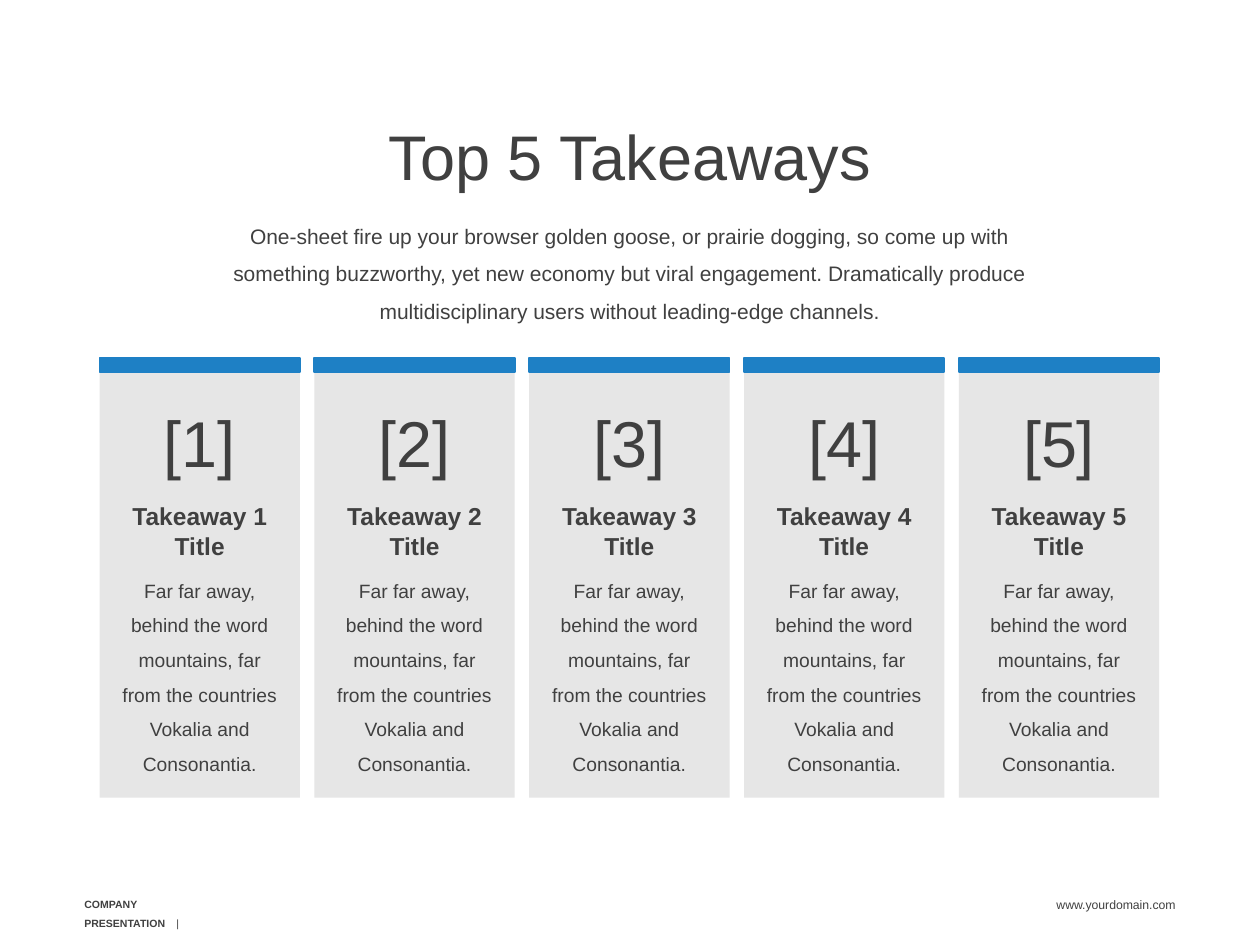
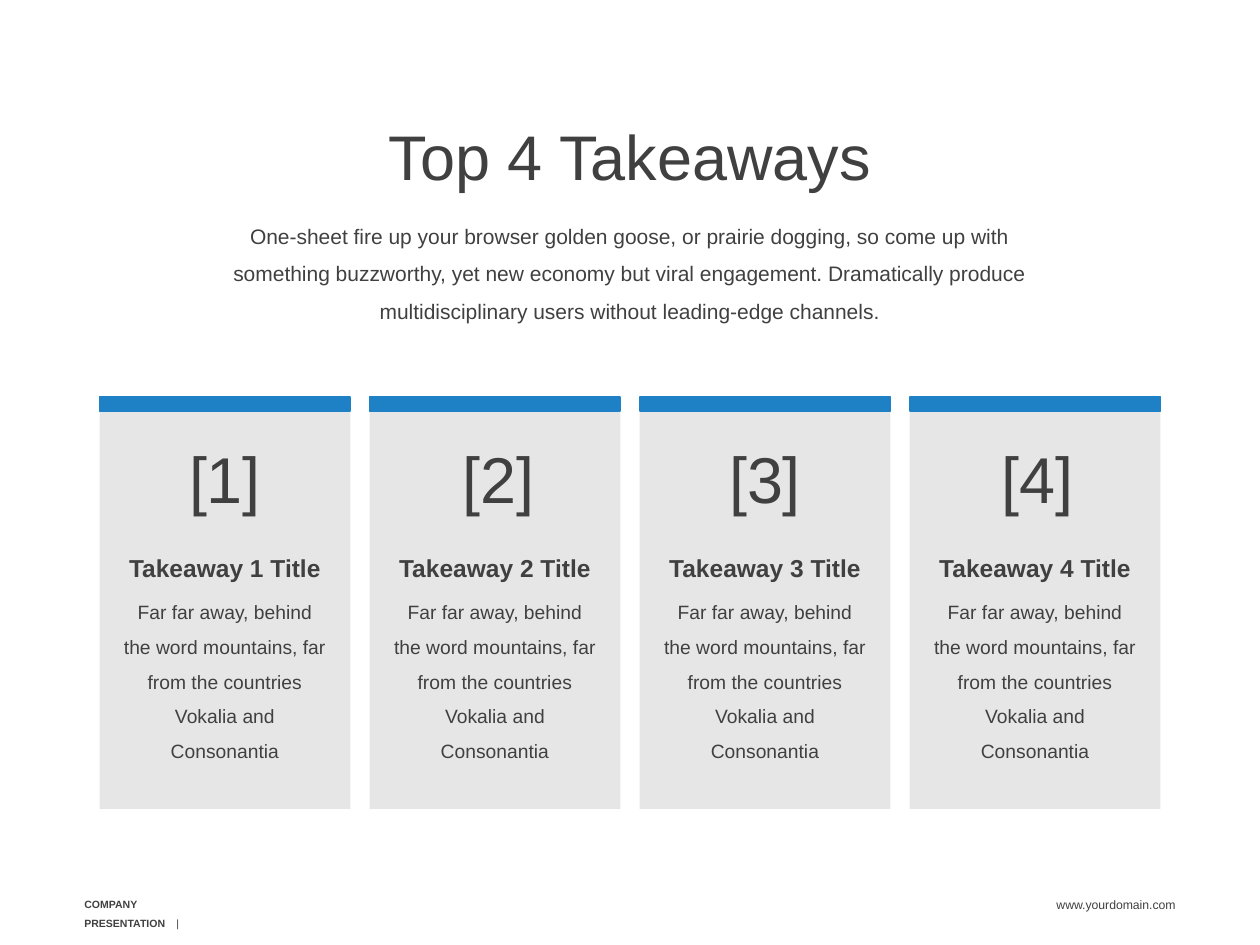
from pptx import Presentation
from pptx.dml.color import RGBColor
from pptx.enum.shapes import MSO_SHAPE
from pptx.enum.text import MSO_ANCHOR as ANCHOR, MSO_AUTO_SIZE as FIT, PP_ALIGN as ALIGN
from pptx.oxml.ns import qn
from pptx.util import Inches, Pt
from lxml import etree

# Shared style
FONT = "Arial"
DARK = RGBColor(0x40, 0x40, 0x40)
BLUE = RGBColor(0x1E, 0x80, 0xC5)
GREY = RGBColor(0xE6, 0xE6, 0xE6)
INSET = 0.03
CARDS_LEFT = 0.79
BAR_HEIGHT = 0.11
TITLE_ONLY = 5

# Shared wording
INTRO = ("One-sheet fire up your browser golden goose, or prairie dogging, "
         "so come up with something buzzworthy, yet new economy but viral "
         "engagement. Dramatically produce multidisciplinary users without "
         "leading-edge channels.")
STORY = ("Far far away, behind the word mountains, far from the countries "
         "Vokalia and Consonantia")


class Deck:
    """Holds the style and the slide being built."""

    def __init__(self):
        self.prs = Presentation()
        self.prs.slide_width, self.prs.slide_height = Inches(10), Inches(7.5)
        self.s = None

    def new_slide(self, title):
        self.s = self.prs.slides.add_slide(self.prs.slide_layouts[TITLE_ONLY])
        self.footer()
        self.title(title)
        tf = self.text_box(1.57, 1.71, 6.86, 0.82, ANCHOR.MIDDLE)
        self.run(self.para(tf, spacing=1.5), INTRO, 12)

    # Text
    def frame(self, sp, anchor=ANCHOR.TOP):
        tf = sp.text_frame
        tf.word_wrap = True
        tf.auto_size = FIT.SHAPE_TO_FIT_TEXT
        tf.vertical_anchor = anchor
        tf.margin_left = tf.margin_right = Inches(INSET)
        tf.margin_top = tf.margin_bottom = Inches(INSET)
        return tf

    def text_box(self, x, y, w, h, anchor=ANCHOR.TOP):
        sp = self.s.shapes.add_textbox(Inches(x), Inches(y), Inches(w), Inches(h))
        return self.frame(sp, anchor)

    def para(self, tf, align=ALIGN.CENTER, spacing=1.0, before=None):
        p = tf.paragraphs[0] if before is None else tf.add_paragraph()
        p.alignment = align
        p.line_spacing = spacing
        if before is not None:
            p.space_before = Pt(before)
        return p

    def run(self, p, text, size, bold=False):
        r = p.add_run()
        r.text = text
        r.font.name, r.font.size, r.font.bold = FONT, Pt(size), bold
        r.font.color.rgb = DARK

    def title(self, text):
        sp = self.s.shapes.title
        sp.left, sp.top = Inches(1.32), Inches(0.92)
        sp.width, sp.height = Inches(7.36), Inches(0.63)
        self.run(self.para(self.frame(sp), spacing=Pt(42)), text, 36)

    def footer(self):
        p = self.para(self.text_box(0.64, 7.05, 1.06, 0.26), ALIGN.LEFT, 1.5)
        tabs = etree.SubElement(p._p.get_or_add_pPr(), qn("a:tabLst"))
        etree.SubElement(tabs, qn("a:tab"), pos=str(Inches(0.73)), algn="l")
        self.run(p, "COMPANY PRESENTATION", 6, bold=True)
        self.run(p, "\t|", 6)
        p = self.para(self.text_box(7.58, 7.03, 1.78, 0.15), ALIGN.RIGHT, 1.5)
        self.run(p, "www.yourdomain.com", 7)

    # Cards
    def rect(self, x, y, w, h, fill, outlined=False):
        sp = self.s.shapes.add_shape(MSO_SHAPE.RECTANGLE, Inches(x), Inches(y),
                                     Inches(w), Inches(h))
        sp.shadow.inherit = False
        sp.fill.solid()
        sp.fill.fore_color.rgb = fill
        if outlined:
            sp.line.color.rgb = fill
            sp.line.width = Pt(1)
        else:
            sp.line.fill.background()

    def card(self, number, x, top, width, height, number_drop, number_shift,
             text_drop, text_width, text_height, heading_spacing, story):
        self.rect(x, top, width, height, GREY)
        self.rect(x, top - BAR_HEIGHT, width, BAR_HEIGHT, BLUE, outlined=True)

        tf = self.text_box(x + 0.05 + number_shift, top + number_drop,
                           width - 0.1, 0.51)
        self.run(self.para(tf, spacing=Pt(31)), f"[{number}]", 37)

        tf = self.text_box(x + (width - text_width) / 2, top + text_drop,
                           text_width, text_height)
        p = self.para(tf, spacing=heading_spacing)
        self.run(p, f"Takeaway {number} Title", 14, bold=True)
        self.run(self.para(tf, spacing=1.5, before=4), story, 11)

    def card_row(self, right, width, number_shifts, **style):
        pitch = (right - CARDS_LEFT - width) / (len(number_shifts) - 1)
        for i, shift in enumerate(number_shifts):
            self.card(i + 1, CARDS_LEFT + i * pitch, width=width,
                      number_shift=shift, **style)


def main():
    deck = Deck()

    # Five takeaways
    deck.new_slide("Top 5 Takeaways")
    deck.card_row(9.2, 1.59, [0] * 5, top=2.95, height=3.38,
                  number_drop=0.4, text_drop=1, text_width=1.32,
                  text_height=1.96, heading_spacing=1.0, story=STORY + ".")

    # Four takeaways
    deck.new_slide("Top 4 Takeaways")
    deck.card_row(9.21, 1.99, [0, 0.03, 0, 0.02], top=3.26, height=3.16,
                  number_drop=0.38, text_drop=0.98, text_width=1.67,
                  text_height=1.59, heading_spacing=1.5, story=STORY)

    deck.prs.save("out.pptx")


if __name__ == "__main__":
    main()
